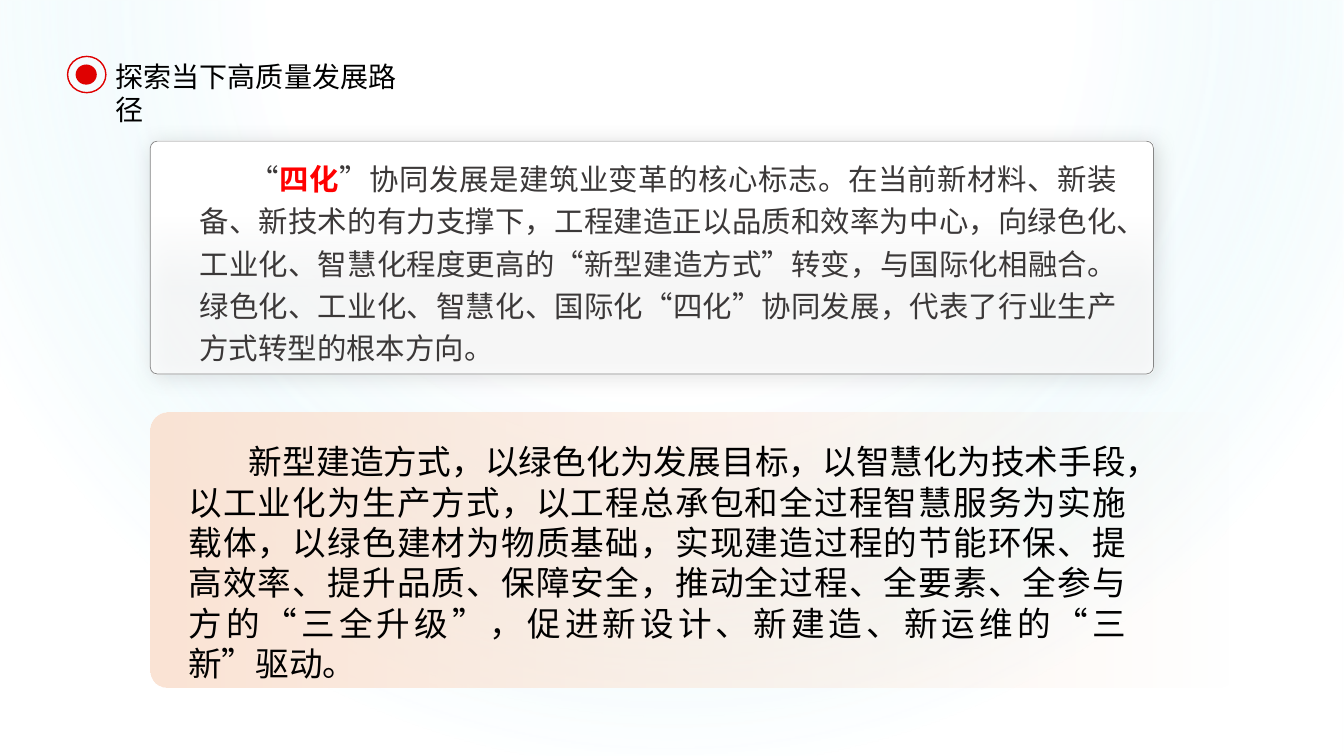
from lxml import etree
from pptx import Presentation
from pptx.dml.color import RGBColor
from pptx.enum import shapes, text
from pptx.oxml import ns
from pptx.util import Inches, Pt

# Content
FONT = "Noto Sans CJK SC"
BLACK = RGBColor(0x00, 0x00, 0x00)
GRAY = RGBColor(0x3B, 0x38, 0x38)
BORDER = RGBColor(0x86, 0x86, 0x86)
RED = RGBColor(0xFF, 0x00, 0x00)
DARK_RED = RGBColor(0xDF, 0x01, 0x01)
WHITE = RGBColor(0xFF, 0xFF, 0xFF)
PEACH = RGBColor(0xFB, 0xE4, 0xD5)
SKY = RGBColor(0x9C, 0xE5, 0xF4)
SHADOW = RGBColor(0x68, 0x68, 0x68)

TITLE = [("探索当下高质量发展路径", {})]
FOUR_TRENDS = [
    ("“", {}),
    ("四化", {"color": RED, "bold": True}),
    ("”协同发展是建筑业变革的核心标志。在当前新材料、新装备、新技术的有力支撑下，"
     "工程建造正以品质和效率为中心，向绿色化、工业化、智慧化程度更高的“新型建造方式”转变，"
     "与国际化相融合。绿色化、工业化、智慧化、国际化“四化”协同发展，"
     "代表了行业生产方式转型的根本方向。", {}),
]
NEW_METHOD = [
    ("新型建造方式，以绿色化为发展目标，以智慧化为技术手段，以工业化为生产方式，"
     "以工程总承包和全过程智慧服务为实施载体，以绿色建材为物质基础，"
     "实现建造过程的节能环保、提高效率、提升品质、保障安全，"
     "推动全过程、全要素、全参与方的“三全升级”，"
     "促进新设计、新建造、新运维的“三新”驱动。", {}),
]

# Gradient stops: position, colour, opacity in percent
GLOW = [(0, WHITE, 100), (52, WHITE, 39), (100, SKY, 0)]
PEACH_FADE = [(0, PEACH, 0), (100, PEACH, 100)]
WHITE_FADE = [(0, WHITE, 100), (32, WHITE, 100), (62, WHITE, 70)]

# Text boxes: place in inches, sizes in points, first-line indent in inches
TITLE_BOX = dict(at=(1.05, 0.54, 3.2, 0.77), size=20, leading=24,
                 color=BLACK, indent=0, align=text.PP_ALIGN.LEFT)
METHOD_BOX = dict(at=(1.77, 4.33, 9.5, 2.5), size=24, leading=28.8,
                  color=BLACK, indent=0.6, align=text.PP_ALIGN.JUSTIFY)
TRENDS_BOX = dict(at=(1.88, 1.48, 9.3, 2.2), size=21, leading=30.2,
                  color=GRAY, indent=0.5, align=text.PP_ALIGN.JUSTIFY)

presentation = Presentation()
presentation.slide_width = Inches(13.33)
presentation.slide_height = Inches(7.5)
slide = presentation.slides.add_slide(presentation.slide_layouts[6])


def add_element(parent, tag, **attributes):
    element = etree.SubElement(parent, ns.qn("a:" + tag))
    for name, value in attributes.items():
        element.set(name, str(value))
    return element


def add_color(parent, color, opacity):
    element = add_element(parent, "srgbClr", val=color)
    add_element(element, "alpha", val=opacity * 1000)


def add_panel(kind, at, fill=None, line=None, line_width=1, corner=None):
    shape = slide.shapes.add_shape(kind, *map(Inches, at))
    shape.shadow.inherit = False
    if corner is not None:
        shape.adjustments[0] = corner
    if fill is None:
        shape.fill.background()
    else:
        shape.fill.solid()
        shape.fill.fore_color.rgb = fill
    if line is None:
        shape.line.fill.background()
    else:
        shape.line.color.rgb = line
        shape.line.width = Pt(line_width)
    return shape


def set_gradient(shape, stops, angle=None, focus=None):
    properties = shape.element.spPr
    gradient = etree.Element(ns.qn("a:gradFill"), rotWithShape="1")
    stop_list = add_element(gradient, "gsLst")
    for position, color, opacity in stops:
        add_color(add_element(stop_list, "gs", pos=position * 1000), color, opacity)
    if focus:
        circle = add_element(gradient, "path", path="circle")
        sides = {side: value * 1000 for side, value in zip("ltrb", focus)}
        add_element(circle, "fillToRect", **sides)
    else:
        add_element(gradient, "lin", ang=angle * 60000, scaled=0)
    properties.replace(properties.find(ns.qn("a:noFill")), gradient)


def add_text(runs, at, size, leading, color, indent, align):
    frame = slide.shapes.add_textbox(*map(Inches, at)).text_frame
    frame.word_wrap = True
    paragraph = frame.paragraphs[0]
    for name, value in {"alignment": align, "line_spacing": Pt(leading)}.items():
        setattr(paragraph, name, value)
    if indent:
        paragraph._p.get_or_add_pPr().set("indent", str(Inches(indent)))
    for words, changes in runs:
        run = paragraph.add_run()
        run.text = words
        formats = {"name": FONT, "size": Pt(size), "bold": changes.get("bold", False)}
        for name, value in formats.items():
            setattr(run.font, name, value)
        run.font.color.rgb = changes.get("color", color)
        properties = run._r.get_or_add_rPr()
        properties.set("lang", "zh-CN")
        add_element(properties, "ea", typeface=FONT)


# Background glow
glow = add_panel(shapes.MSO_SHAPE.RECTANGLE, (0, 0, 13.33, 7.5))
set_gradient(glow, GLOW, focus=(50, -80, 50, 180))

# Title with its ring and dot
add_panel(shapes.MSO_SHAPE.OVAL, (0.67, 0.56, 0.38, 0.36), line=DARK_RED)
add_panel(shapes.MSO_SHAPE.OVAL, (0.75, 0.64, 0.21, 0.2), fill=DARK_RED)
add_text(TITLE, **TITLE_BOX)

# Lower panel: new construction method
lower = add_panel(shapes.MSO_SHAPE.ROUNDED_RECTANGLE, (1.49, 4.09, 10.75, 2.73), corner=0.06)
set_gradient(lower, PEACH_FADE, angle=180)
add_text(NEW_METHOD, **METHOD_BOX)

# Upper panel: four trends, with a soft shadow
upper = add_panel(shapes.MSO_SHAPE.ROUNDED_RECTANGLE, (1.49, 1.4, 9.95, 2.31),
                  line=BORDER, line_width=0.5, corner=0.03)
set_gradient(upper, WHITE_FADE, angle=90)
effects = upper.element.spPr.find(ns.qn("a:effectLst"))
shadow = add_element(effects, "outerShdw", blurRad=Pt(15), dist=Pt(3),
                     dir=45 * 60000, algn="tl", rotWithShape=0)
add_color(shadow, SHADOW, 25)
add_text(FOUR_TRENDS, **TRENDS_BOX)

presentation.save("out.pptx")
